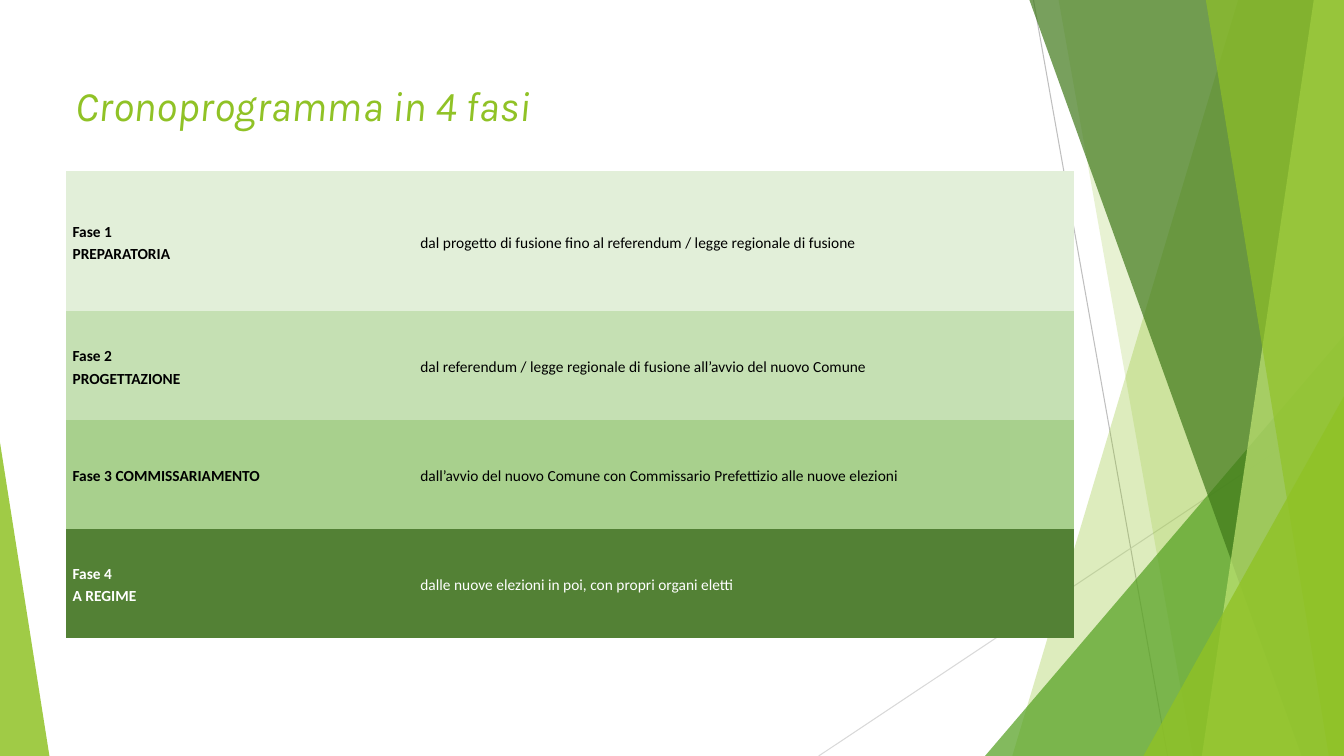
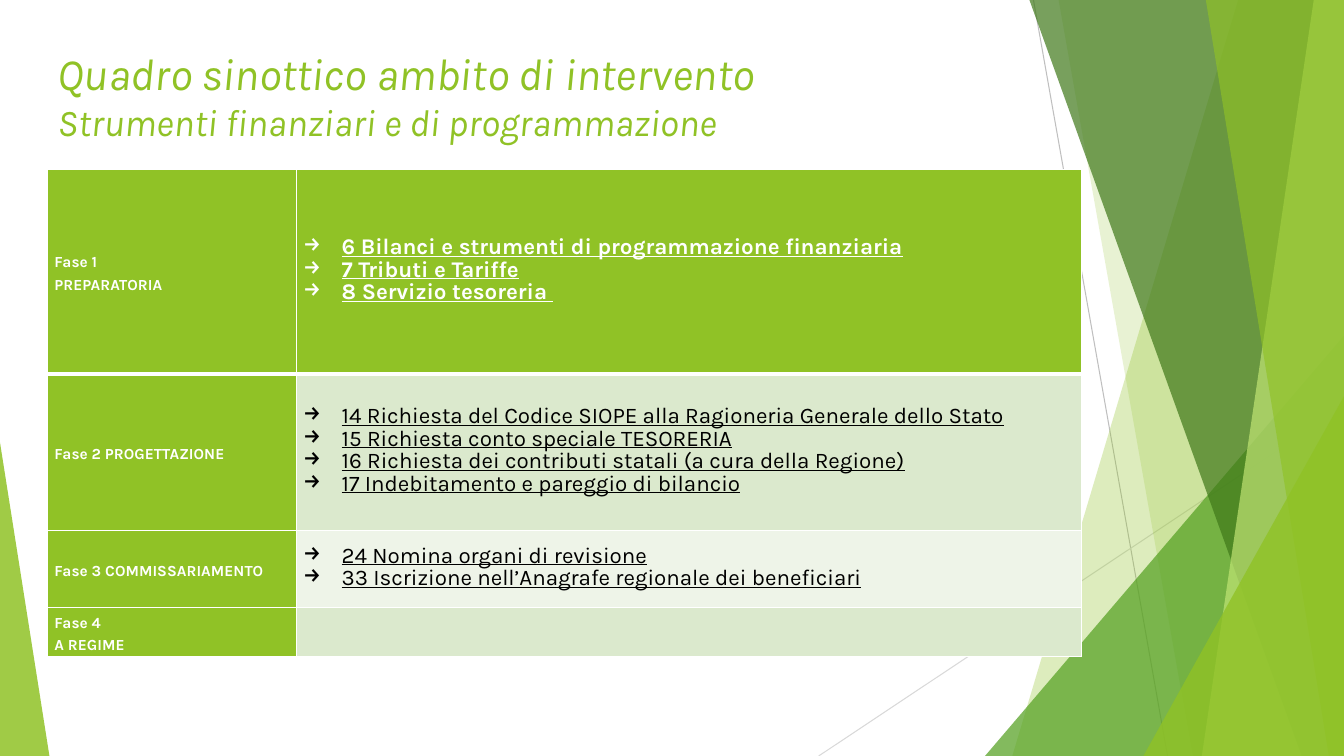
import pptx
import pptx.util
import pptx.dml.color
import pptx.enum.shapes
import pptx.enum.text
import pptx.oxml.ns
import lxml.etree

Inches, Pt = pptx.util.Inches, pptx.util.Pt
qn = pptx.oxml.ns.qn
MSO = pptx.enum.shapes.MSO_SHAPE
ANCHOR = pptx.enum.text.MSO_ANCHOR
LEFT = pptx.enum.text.PP_ALIGN.LEFT

W, H = 13.33, 7.5
LIME, WHITE, BLACK = "90C226", "FFFFFF", "000000"
INDENT = 0.38

# Decoration, back to front
LINES = [((10.25, 0), (11.58, H), "BFBFBF"), ((W, 4.03), (8.12, H), "D9D9D9")]
FACETS = [  # band: top and bottom x of its left edge; triangle: left, top, width, apex
    ("band", (12.28, 10.04), LIME, 30),
    ("band", (10.5, 11.83), LIME, 20),
    ("triangle", (9.77, 3.33, W - 9.77, 1), "54A021", 72),
    ("band", (10.21, 12.91), "3F7819", 70),
    ("band", (13.03, 11.92), "C0E474", 70),
    ("band", (11.96, 13.18), LIME, 65),
    ("triangle", (11.34, 3.93, W - 11.34, 1), LIME, 80),
    ("triangle", (0, 4.39, 0.49, 0), LIME, 85),
]

TITLE = dict(name="Karla", italic=True, bold=False)
CELL = dict(margin_left=Inches(0.07), margin_right=Inches(0.07), margin_top=0,
            margin_bottom=0, vertical_anchor=ANCHOR.MIDDLE)

# Rows: fill, text colour, phase lines, description
PHASES = [
    ("E2EFD9", BLACK, ["Fase 1", "PREPARATORIA"],
     "dal progetto di fusione fino al referendum / legge regionale di fusione"),
    ("C5E0B3", BLACK, ["Fase 2", "PROGETTAZIONE"],
     "dal referendum / legge regionale di fusione all’avvio del nuovo Comune"),
    ("A8D08D", BLACK, ["Fase 3 COMMISSARIAMENTO"],
     "dall’avvio del nuovo Comune con Commissario Prefettizio alle nuove elezioni"),
    ("538135", WHITE, ["Fase 4", "A REGIME"],
     "dalle nuove elezioni in poi, con propri organi eletti"),
]

# Rows: fill and text colour of the list, phase lines, list
ACTIONS = [
    (LIME, WHITE, ["Fase 1", "PREPARATORIA"],
     ["6 Bilanci e strumenti di programmazione finanziaria",
      "7 Tributi e Tariffe",
      "8 Servizio tesoreria "]),
    ("DBE9CD", BLACK, ["Fase 2 PROGETTAZIONE"],
     ["14 Richiesta del Codice SIOPE alla Ragioneria Generale dello Stato",
      "15 Richiesta conto speciale TESORERIA",
      "16 Richiesta dei contributi statali (a cura della Regione)",
      "17 Indebitamento e pareggio di bilancio"]),
    ("EEF4E8", BLACK, ["Fase 3 COMMISSARIAMENTO"],
     ["24 Nomina organi di revisione",
      "33 Iscrizione nell’Anagrafe regionale dei beneficiari"]),
    ("DBE9CD", BLACK, ["Fase 4", "A REGIME"], []),
]


def rgb(color):
    return pptx.dml.color.RGBColor.from_string(color)


def put(obj, values):
    for name, value in values.items():
        setattr(obj, name, value)


def place(sp, left, top, width, height):
    put(sp, dict(left=Inches(left), top=Inches(top),
                 width=Inches(width), height=Inches(height)))


def paint(obj, color):
    obj.fill.solid()
    obj.fill.fore_color.rgb = rgb(color)


def add_run(p, text, color, values):
    r = p.add_run()
    r.text = text
    put(r.font, values)
    r.font.color.rgb = rgb(color)


def add_band(shapes, top_x, bottom_x):
    """Area from a slanted left edge to the right edge of the slide."""
    builder = shapes.build_freeform(Inches(top_x), 0)
    corners = [(W, 0), (W, H), (bottom_x, H)]
    builder.add_line_segments([(Inches(x), Inches(y)) for x, y in corners])
    return builder.convert_to_shape()


def add_triangle(shapes, left, top, width, apex):
    """Triangle standing on the bottom edge of the slide."""
    sp = shapes.add_shape(MSO.ISOSCELES_TRIANGLE, Inches(left), Inches(top),
                          Inches(width), Inches(H - top))
    sp.adjustments[0] = apex
    return sp


def add_line(shapes, start, end, color):
    cx = shapes.add_connector(pptx.enum.shapes.MSO_CONNECTOR.STRAIGHT,
                              *[Inches(v) for v in start + end])
    cx.line.color.rgb = rgb(color)
    cx.line.width = Pt(0.75)
    lxml.etree.SubElement(cx.element.spPr, qn("a:effectLst"))
    return cx


def decorate(layout, s):
    """Draw the decoration on s, then move it to the layout that slides share."""
    drawn = [add_line(s.shapes, *line) for line in LINES]
    makers = {"band": add_band, "triangle": add_triangle}
    for kind, geometry, color, opacity in FACETS:
        sp = makers[kind](s.shapes, *geometry)
        paint(sp, color)
        clr = sp.element.spPr.find(".//" + qn("a:srgbClr"))
        lxml.etree.SubElement(clr, qn("a:alpha"), val=str(opacity * 1000))
        sp.line.fill.background()
        sp.shadow.inherit = False
        drawn.append(sp)
    for number, sp in enumerate(drawn, 100):
        sp.element.find(".//" + qn("p:cNvPr")).set("id", str(number))
        layout.shapes.element.append(sp.element)


def set_title(s, box, lines, margin_top=0.05):
    """Lines are pairs of text and size, parted by line breaks."""
    sp = s.shapes.title
    place(sp, *box)
    tf = sp.text_frame
    put(tf, dict(word_wrap=True, vertical_anchor=ANCHOR.TOP,
                 margin_top=Inches(margin_top),
                 auto_size=pptx.enum.text.MSO_AUTO_SIZE.NONE))
    p = tf.paragraphs[0]
    p.alignment = LEFT
    for i, (text, size) in enumerate(lines):
        if i:
            p.add_line_break()
        add_run(p, text, LIME, dict(TITLE, size=Pt(size)))


def add_bullet(p):
    pPr = p._p.get_or_add_pPr()
    pPr.set("marL", str(Inches(INDENT)))
    pPr.set("indent", str(-Inches(INDENT)))
    lxml.etree.SubElement(pPr, qn("a:buChar"), char="→")


def set_borders(cell, widths):
    """Widths in points for left, right, top and bottom; 0 draws none."""
    tcPr = cell._tc.get_or_add_tcPr()
    for i, (side, width) in enumerate(zip("LRTB", widths)):
        ln = lxml.etree.Element(qn("a:ln" + side), w=str(Pt(width)))
        if width:
            fill = lxml.etree.SubElement(ln, qn("a:solidFill"))
            lxml.etree.SubElement(fill, qn("a:srgbClr"), val=WHITE)
        else:
            lxml.etree.SubElement(ln, qn("a:noFill"))
        tcPr.insert(i, ln)


def fill_cell(cell, fill, lines, color, font, borders, bullets=False):
    put(cell, CELL)
    paint(cell, fill)
    set_borders(cell, borders)
    tf = cell.text_frame
    for i, text in enumerate(lines):
        p = tf.add_paragraph() if i else tf.paragraphs[0]
        put(p, dict(line_spacing=Pt(16), alignment=LEFT))
        if bullets:
            add_bullet(p)
        add_run(p, text, color, font)


def add_table(s, left, top, cols, rows):
    frame = s.shapes.add_table(len(rows), len(cols), Inches(left), Inches(top),
                               Inches(sum(cols)), Inches(sum(rows)))
    table = frame.table
    put(table, dict(first_row=False, horz_banding=False))
    for col, width in zip(table.columns, cols):
        col.width = Inches(width)
    for row, height in zip(table.rows, rows):
        row.height = Inches(height)
    return table


def schedule_slide(s):
    set_title(s, (0.65, 0.25, 10, 1.45), [("Cronoprogramma in 4 fasi", 30)], 0.54)
    table = add_table(s, 0.65, 1.7, [3.45, 6.55], [1.39] + [1.08] * 3)
    font = dict(name="Calibri", size=Pt(11))
    for i, (fill, color, phase, description) in enumerate(PHASES):
        for j, lines in enumerate([phase, [description]]):
            fill_cell(table.cell(i, j), fill, lines, color,
                      dict(font, bold=j == 0), [0] * 4)


def overview_slide(s):
    set_title(s, (0.47, 0.4, 10.26, 1.73),
              [("Quadro sinottico ambito di intervento", 32),
               ("Strumenti finanziari e di programmazione", 27)])
    table = add_table(s, 0.47, 1.68, [2.47, 7.79], [2.03, 1.55, 0.77, 0.48])
    for i, (fill, color, phase, actions) in enumerate(ACTIONS):
        borders = [1, 1, 3 if i == 1 else 1, 3 if i == 0 else 1]
        fill_cell(table.cell(i, 0), LIME, phase, WHITE,
                  dict(name="Karla", size=Pt(11), bold=True), borders)
        fill_cell(table.cell(i, 1), fill, actions, color,
                  dict(name="Karla", size=Pt(16), bold=i == 0, underline=True),
                  borders, bullets=True)


def main():
    prs = pptx.Presentation()
    put(prs, dict(slide_width=Inches(W), slide_height=Inches(H)))
    layout = prs.slide_layouts[5]
    schedule, overview = [prs.slides.add_slide(layout) for _ in range(2)]
    decorate(layout, schedule)
    schedule_slide(schedule)
    overview_slide(overview)
    prs.save("out.pptx")


if __name__ == "__main__":
    main()
